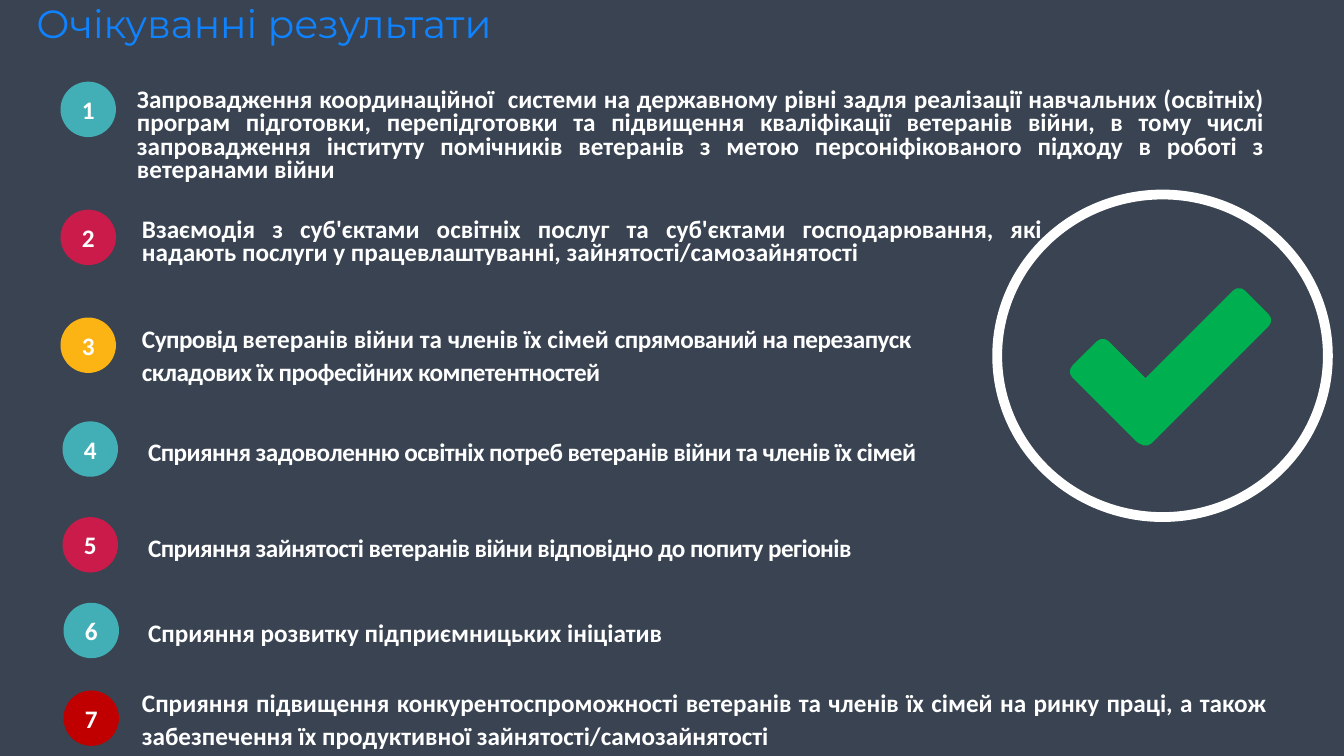
from pptx import Presentation
from pptx.dml.color import RGBColor
from pptx.enum import shapes, text
from pptx.util import Inches, Pt

NAVY = RGBColor(0x39, 0x43, 0x51)
BLUE = RGBColor(0x0F, 0x83, 0xFF)
TEAL = RGBColor(0x42, 0xAF, 0xB6)
ROSE = RGBColor(0xCB, 0x1B, 0x4A)
GOLD = RGBColor(0xFC, 0xB4, 0x14)
RED = RGBColor(0xC0, 0x00, 0x00)
GREEN = RGBColor(0x00, 0xB0, 0x50)
WHITE = RGBColor(0xFF, 0xFF, 0xFF)

TITLE = "Очікуванні результати"
LEFT, JUST = text.PP_ALIGN.LEFT, text.PP_ALIGN.JUSTIFY
EXACT = Pt(16.8)
LOOSE = 1.07
TIGHT = -40  # letter spacing, hundredths of a point
DOT = 0.55

# Results: dot colour, dot (left, top), text box, alignment, line spacing, runs
RESULTS = [
    (TEAL, (0.6, 0.81), (1.26, 0.84, 11.38, 1.05), JUST, EXACT, [
        ("Запровадження координаційної  системи на державному рівні задля "
         "реалізації навчальних (освітніх) програм підготовки, перепідготовки "
         "та підвищення кваліфікації ветеранів війни, в тому числі "
         "запровадження інституту помічників ветеранів з метою "
         "персоніфікованого підходу в роботі з ветеранами війни", 0)]),
    (ROSE, (0.6, 2.08), (1.31, 2.13, 9.13, 0.58), JUST, EXACT, [
        ("Взаємодія з суб'єктами освітніх послуг та суб'єктами "
         "господарювання, які надають послуги у працевлаштуванні, "
         "зайнятості/самозайнятості", 0)]),
    (GOLD, (0.6, 3.15), (1.31, 3.14, 8.62, 0.73), LEFT, LOOSE, [
        ("Супровід ", TIGHT),
        ("ветеранів війни та членів їх сімей ", 0),
        ("спрямований на перезапуск складових їх професійних "
         "компетентностей", TIGHT)]),
    (TEAL, (0.62, 4.18), (1.37, 4.26, 8.75, 0.41), LEFT, LOOSE, [
        ("Сприяння задоволенню освітніх потреб ветеранів війни та членів "
         "їх сімей", TIGHT)]),
    (ROSE, (0.62, 5.13), (1.37, 5.21, 8.88, 0.43), LEFT, LOOSE, [
        ("Сприяння зайнятості ветеранів війни відповідно до попиту "
         "регіонів", TIGHT)]),
    (TEAL, (0.63, 5.98), (1.37, 6.05, 6.9, 0.43), LEFT, LOOSE, [
        ("Сприяння розвитку підприємницьких ініціатив", 0)]),
    (RED, (0.63, 6.85), (1.31, 6.75, 11.36, 0.75), JUST, LOOSE, [
        ("Сприяння підвищення конкурентоспроможності ветеранів та членів "
         "їх сімей на ринку праці, а також забезпечення їх продуктивної "
         "зайнятості/самозайнятості", 0)]),
]

# Check mark: box and turn of each bar
BARS = [((10.6, 3.63, 1.07, 0.51), 45), ((10.92, 3.39, 1.81, 0.5), 135)]
RING = (9.89, 1.93, 3.28, 3.2)


def place(box):
    return [Inches(n) for n in box]


def style(font, size, name, color, bold):
    font.size, font.name, font.bold = Pt(size), name, bold
    font.color.rgb = color


def draw(home, kind, box, fill=None):
    shape = home.add_shape(kind, *place(box))
    shape.shadow.inherit = False
    if fill is None:
        shape.fill.background()
    else:
        shape.fill.solid()
        shape.fill.fore_color.rgb = fill
        shape.line.fill.background()
    return shape


def add_dot(slide, label, color, spot):
    dot = draw(slide.shapes, shapes.MSO_SHAPE.OVAL, (*spot, DOT, DOT), color)
    frame = dot.text_frame
    frame.vertical_anchor = text.MSO_ANCHOR.MIDDLE
    para = frame.paragraphs[0]
    para.text = label
    para.alignment = text.PP_ALIGN.CENTER
    style(para.font, 18, "Calibri", WHITE, True)


def add_note(slide, box, align, pitch, runs):
    frame = slide.shapes.add_textbox(*place(box)).text_frame
    frame.word_wrap = True
    frame.auto_size = text.MSO_AUTO_SIZE.SHAPE_TO_FIT_TEXT
    para = frame.paragraphs[0]
    para.alignment, para.line_spacing = align, pitch
    if pitch == LOOSE:
        para.space_after = Pt(8)
    style(para.font, 18, "Calibri", WHITE, True)
    for words, gap in runs:
        run = para.add_run()
        run.text = words
        if gap:
            run.font._element.set("spc", str(gap))


def add_title(slide):
    title = slide.shapes.title
    title.left, title.top, title.width, title.height = place(
        (0.33, -0.11, 5.56, 0.57))
    frame = title.text_frame
    frame.word_wrap = True
    frame.auto_size = text.MSO_AUTO_SIZE.NONE
    frame.vertical_anchor = text.MSO_ANCHOR.TOP
    frame.margin_left = frame.margin_right = Inches(0.03)
    frame.margin_top = frame.margin_bottom = Inches(0.03)
    para = frame.paragraphs[0]
    para.text = TITLE
    para.alignment, para.line_spacing = JUST, 1.15
    para.space_before, para.space_after = Pt(10), Pt(12.3)
    style(para.font, 28, "Montserrat", BLUE, False)


def add_check(slide):
    group = slide.shapes.add_group_shape().shapes
    for box, turn in BARS:
        bar = draw(group, shapes.MSO_SHAPE.ROUNDED_RECTANGLE, box, GREEN)
        bar.rotation = turn
    ring = draw(group, shapes.MSO_SHAPE.OVAL, RING)
    ring.line.color.rgb = WHITE
    ring.line.width = Pt(7)


def main():
    deck = Presentation()
    deck.slide_width, deck.slide_height = Inches(13.33), Inches(7.5)
    slide = deck.slides.add_slide(deck.slide_layouts[5])
    slide.background.fill.solid()
    slide.background.fill.fore_color.rgb = NAVY

    add_title(slide)
    add_check(slide)
    # Numbered results
    for num, (color, spot, *note) in enumerate(RESULTS, 1):
        add_dot(slide, str(num), color, spot)
        add_note(slide, *note)
    deck.save("out.pptx")


if __name__ == "__main__":
    main()
